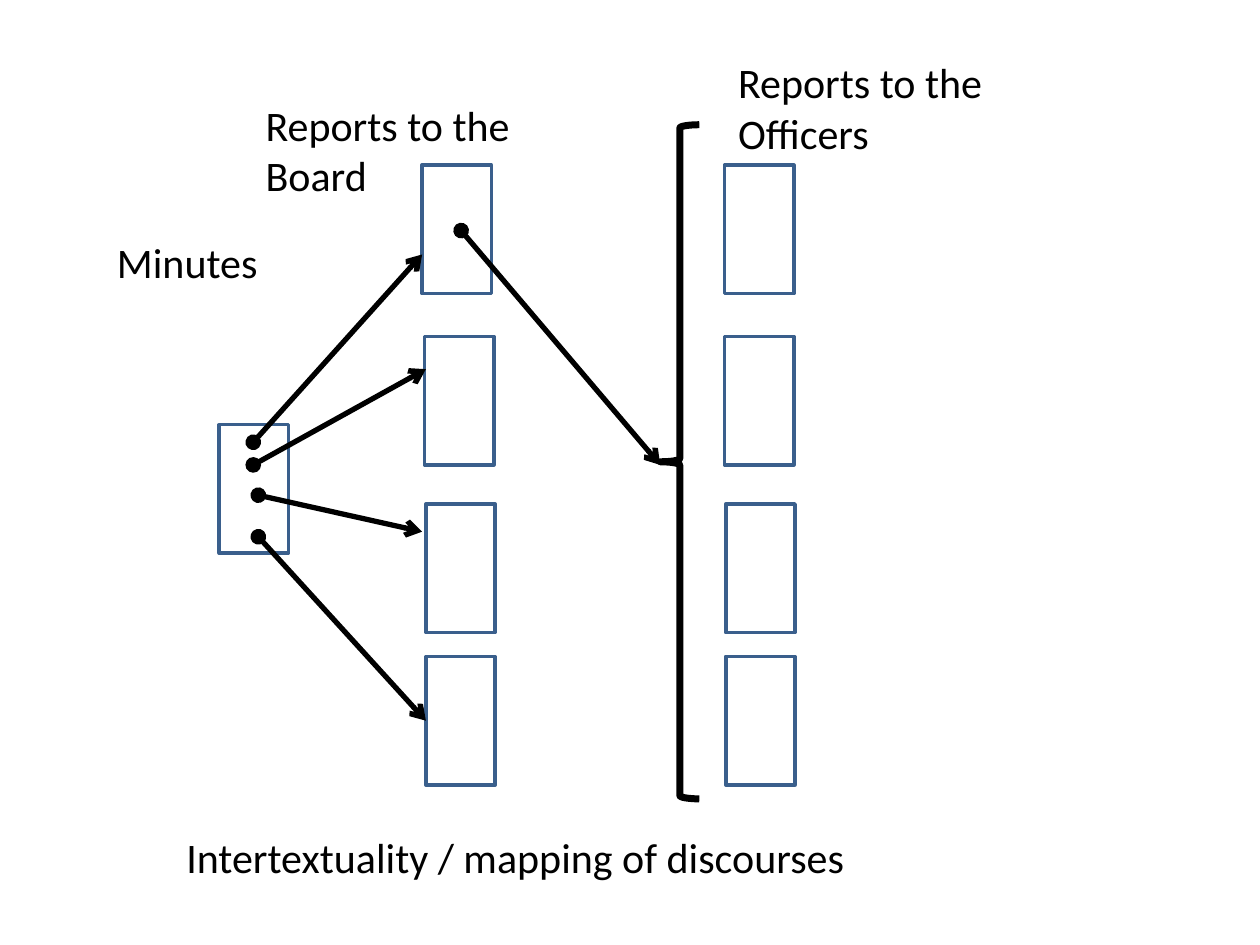
from lxml import etree
from pptx import Presentation
from pptx.dml.color import RGBColor
from pptx.enum.shapes import MSO_CONNECTOR, MSO_SHAPE
from pptx.enum.text import MSO_AUTO_SIZE
from pptx.oxml.ns import qn
from pptx.util import Pt

PX = 9144  # EMU, 100 px to the inch
BLUE = RGBColor(0x3A, 0x5F, 0x8C)
BLACK = RGBColor(0, 0, 0)
RECT = MSO_SHAPE.RECTANGLE
BRACE = MSO_SHAPE.LEFT_BRACE
STRAIGHT = MSO_CONNECTOR.STRAIGHT
GROW = MSO_AUTO_SIZE.SHAPE_TO_FIT_TEXT
LEFT = 1

DOC = (55, 102)
MINUTES = (174, 337)
BOARD = [(335, 131), (337, 267), (338, 400), (338, 521)]
OFFICERS = [(575, 131), (575, 267), (576, 400), (576, 521)]
ARROWS = [
    (201, 351, 335, 202),
    (201, 369, 338, 293),
    (205, 393, 335, 422),
    (366, 183, 524, 369),
]
LABELS = [
    ("Minutes", 83, 183, 165, 50),
    ("Reports to the Board", 201, 74, 232, 91),
    ("Reports to the Officers", 576, 40, 271, 91),
    ("Intertextuality / mapping of discourses", 138, 655, 709, 50),
]


def emu(*sizes):
    return [size * PX for size in sizes]


def outline(slide, kind, box, color, width):
    """Add an unfilled preset shape."""
    shape = slide.shapes.add_shape(kind, *emu(*box))
    shape.shadow.inherit = False
    shape.fill.background()
    shape.line.color.rgb = color
    shape.line.width = Pt(width)
    return shape


def add_doc(slide, spot):
    return outline(slide, RECT, spot + DOC, BLUE, 2)


def add_arrow(slide, ends):
    """Add a line with a dot at its start and an arrow at its end."""
    arrow = slide.shapes.add_connector(STRAIGHT, *emu(*ends))
    arrow.line.color.rgb = BLACK
    arrow.line.width = Pt(3)
    line = arrow.line._get_or_add_ln()
    for tag, kind in {"a:headEnd": "oval", "a:tailEnd": "arrow"}.items():
        etree.SubElement(line, qn(tag), type=kind)
    etree.SubElement(arrow._element.spPr, qn("a:effectLst"))
    return arrow


def add_label(slide, text, *box):
    frame = slide.shapes.add_textbox(*emu(*box)).text_frame
    frame.word_wrap = True
    frame.auto_size = GROW
    frame.text = text
    font = frame.paragraphs[0].runs[0].font
    for name, value in {"name": "Calibri", "size": Pt(24)}.items():
        setattr(font, name, value)
    font.color.rgb = BLACK


def main():
    deck = Presentation()
    deck.slide_width, deck.slide_height = emu(1000, 750)
    slide = deck.slides.add_slide(deck.slide_layouts.get_by_name("Blank"))

    add_doc(slide, MINUTES)
    board = [add_doc(slide, spot) for spot in BOARD]
    for spot in OFFICERS:
        add_doc(slide, spot)
    outline(slide, BRACE, (524, 99, 31, 535), BLACK, 4)

    for ends in ARROWS:
        add_arrow(slide, ends)
    last = add_arrow(slide, (205, 426, 338, 572))
    last.end_connect(board[-1], LEFT)

    for label in LABELS:
        add_label(slide, *label)
    deck.save("out.pptx")


if __name__ == "__main__":
    main()
